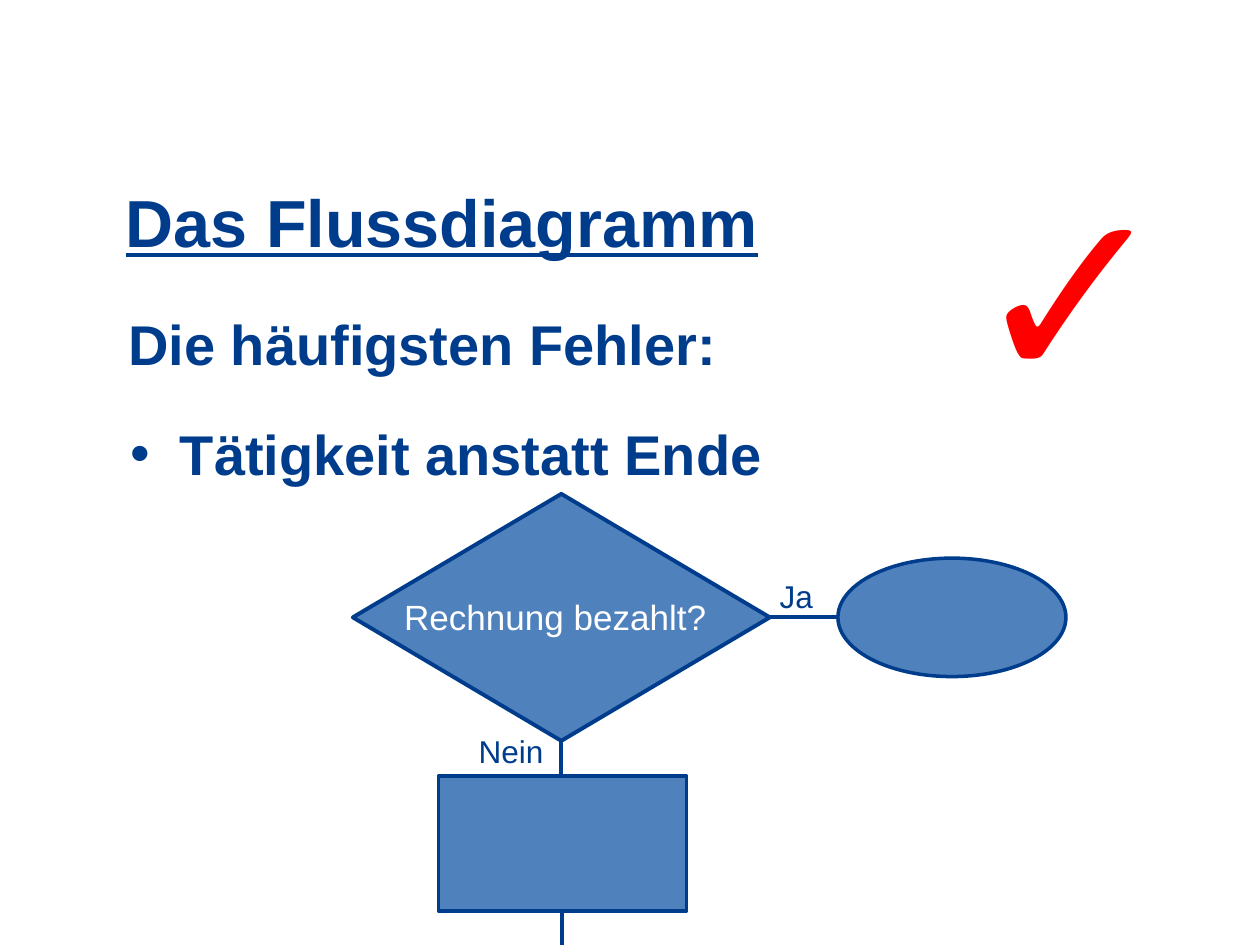
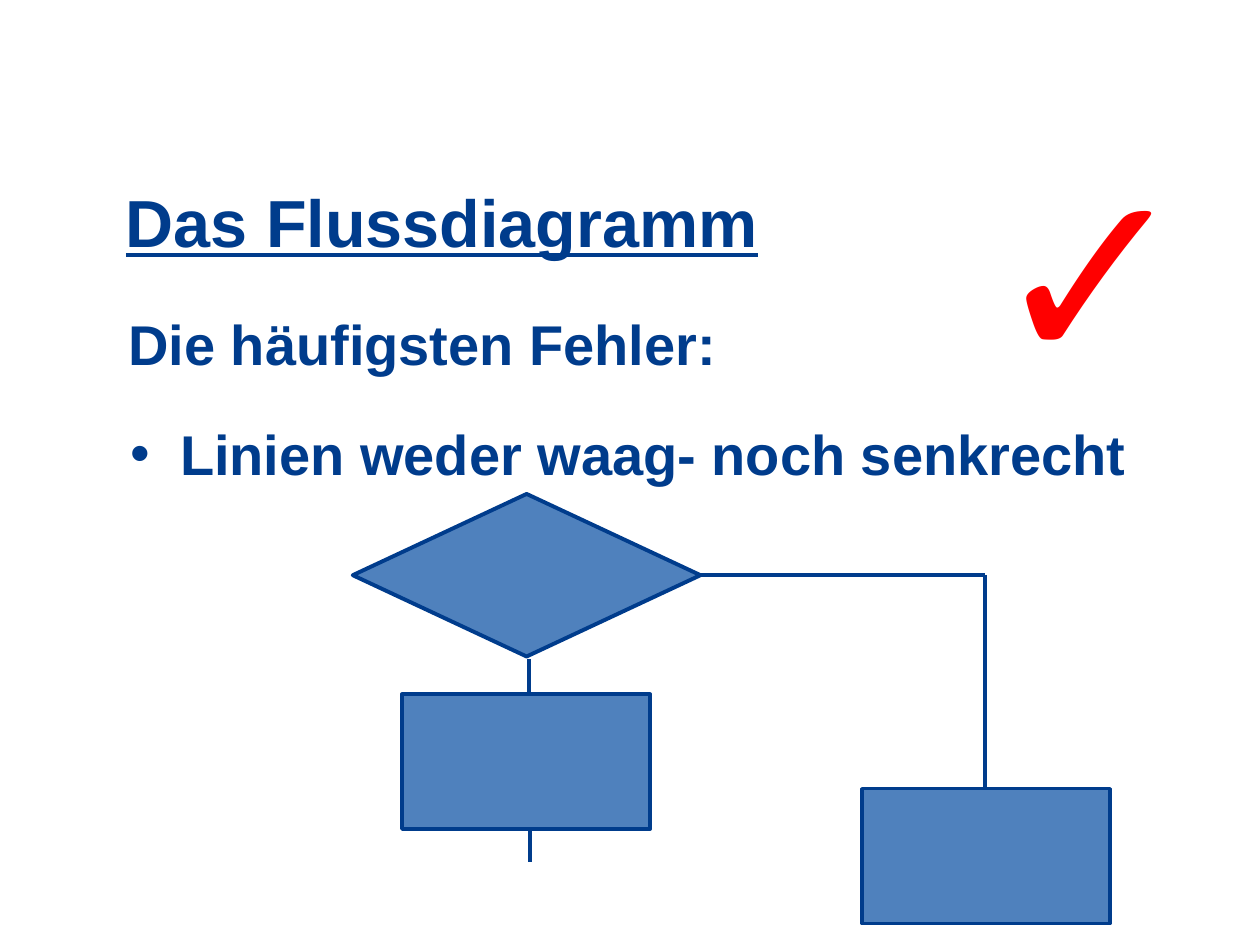
from lxml import etree
from pptx import Presentation
from pptx.dml.color import RGBColor
from pptx.enum.shapes import MSO_CONNECTOR, MSO_SHAPE
from pptx.enum.text import MSO_AUTO_SIZE
from pptx.oxml.ns import qn
from pptx.util import Inches, Pt

COLORS = {"navy": "003C8C", "blue": "4F81BD", "white": "FFFFFF", "red": "FF0000"}
FONT = "Arial"
TITLE = "Das Flussdiagramm"
SUBTITLE = "Die häufigsten Fehler:"
CHECK_SIZE = (1.72, 2.42)
PROCESS_SIZE = (1.97, 1.07)

SHAPE_STYLES = {  # preset shape, line width in points
    "decision": (MSO_SHAPE.FLOWCHART_DECISION, 2.25),
    "process": (MSO_SHAPE.FLOWCHART_PROCESS, 2),
    "end": (MSO_SHAPE.OVAL, 2),
}

# Shapes: kind and box; lines: start and end; labels: text, box, size, color
SLIDES = [
    {
        "mistake": "Tätigkeit anstatt Ende",
        "mistake_width": 5.44,
        "check": (7.6, 1.07),
        "shapes": [
            ("decision", (2.8, 3.92, 3.31, 1.96)),
            ("process", (3.48, 6.16, *PROCESS_SIZE)),
            ("end", (6.65, 4.43, 1.81, 0.94)),
        ],
        "lines": [
            ((6.1, 4.9), (6.65, 4.9)),
            ((4.45, 5.88), (4.45, 6.15)),
            ((4.46, 7.22), (4.46, 7.5)),
        ],
        "labels": [
            ("Rechnung bezahlt?", (3.11, 4.68, 2.6, 0.44), 20, "white"),
            ("Nein", (3.7, 5.76, 0.79, 0.4), 18, "navy"),
            ("Ja", (6.09, 4.53, 0.67, 0.4), 18, "navy"),
        ],
    },
    {
        "mistake": "Linien weder waag- noch senkrecht",
        "mistake_width": 8.71,
        "check": (7.76, 0.92),
        "shapes": [
            ("process", (3.19, 5.51, *PROCESS_SIZE)),
            ("decision", (2.8, 3.92, 2.76, 1.29)),
            ("process", (6.84, 6.26, *PROCESS_SIZE)),
        ],
        "lines": [
            ((4.2, 5.23), (4.2, 5.5)),
            ((4.21, 6.57), (4.21, 6.84)),
            ((7.82, 6.26), (7.82, 4.56)),
            ((7.82, 4.56), (5.55, 4.56)),
        ],
        "labels": [],
    },
]


def rgb(name):
    return RGBColor.from_string(COLORS[name])


def inches(values):
    return [Inches(value) for value in values]


def add_text(slide, text, box, size, color="navy", bold=False, underline=None,
             wrap=True, bullet=False):
    frame = slide.shapes.add_textbox(*inches(box)).text_frame
    frame.word_wrap = wrap
    frame.auto_size = MSO_AUTO_SIZE.SHAPE_TO_FIT_TEXT
    paragraph = frame.paragraphs[0]
    paragraph.text = text
    if bullet:
        add_bullet(paragraph)
    font = paragraph.font
    font.name, font.size, font.bold, font.underline = FONT, Pt(size), bold, underline
    font.color.rgb = rgb(color)


def add_bullet(paragraph, indent=0.39):
    properties = paragraph._p.get_or_add_pPr()
    properties.set("marL", str(Inches(indent)))
    properties.set("indent", str(-Inches(indent)))
    etree.SubElement(properties, qn("a:buFont")).set("typeface", FONT)
    etree.SubElement(properties, qn("a:buChar")).set("char", "•")


def add_flow_shape(slide, kind, box):
    preset, line_width = SHAPE_STYLES[kind]
    shape = slide.shapes.add_shape(preset, *inches(box))
    shape.shadow.inherit = False
    shape.fill.solid()
    shape.fill.fore_color.rgb = rgb("blue")
    shape.line.color.rgb = rgb("navy")
    shape.line.width = Pt(line_width)


def add_flow_line(slide, start, end):
    line = slide.shapes.add_connector(MSO_CONNECTOR.STRAIGHT, *inches(start + end))
    line.line.color.rgb = rgb("navy")
    line.line.width = Pt(2.25)
    etree.SubElement(line._element.spPr, qn("a:effectLst"))


def build_slide(presentation, content):
    slide = presentation.slides.add_slide(presentation.slide_layouts[6])
    add_text(slide, TITLE, (0.9, 1.39, 8.74, 0.74), 38, bold=True, underline=True)
    add_text(slide, content["mistake"], (0.94, 3.28, content["mistake_width"], 0.64),
             32, bold=True, bullet=True)
    add_text(slide, SUBTITLE, (0.92, 2.41, 4.91, 0.64), 32, bold=True, wrap=False)
    for kind, box in content["shapes"]:
        add_flow_shape(slide, kind, box)
    for start, end in content["lines"]:
        add_flow_line(slide, start, end)
    for text, box, size, color in content["labels"]:
        add_text(slide, text, box, size, color)
    add_text(slide, "✓", content["check"] + CHECK_SIZE, 138, "red", wrap=False)


def main():
    presentation = Presentation()
    presentation.slide_width, presentation.slide_height = Inches(10), Inches(7.5)
    for content in SLIDES:
        build_slide(presentation, content)
    presentation.save("out.pptx")


if __name__ == "__main__":
    main()
